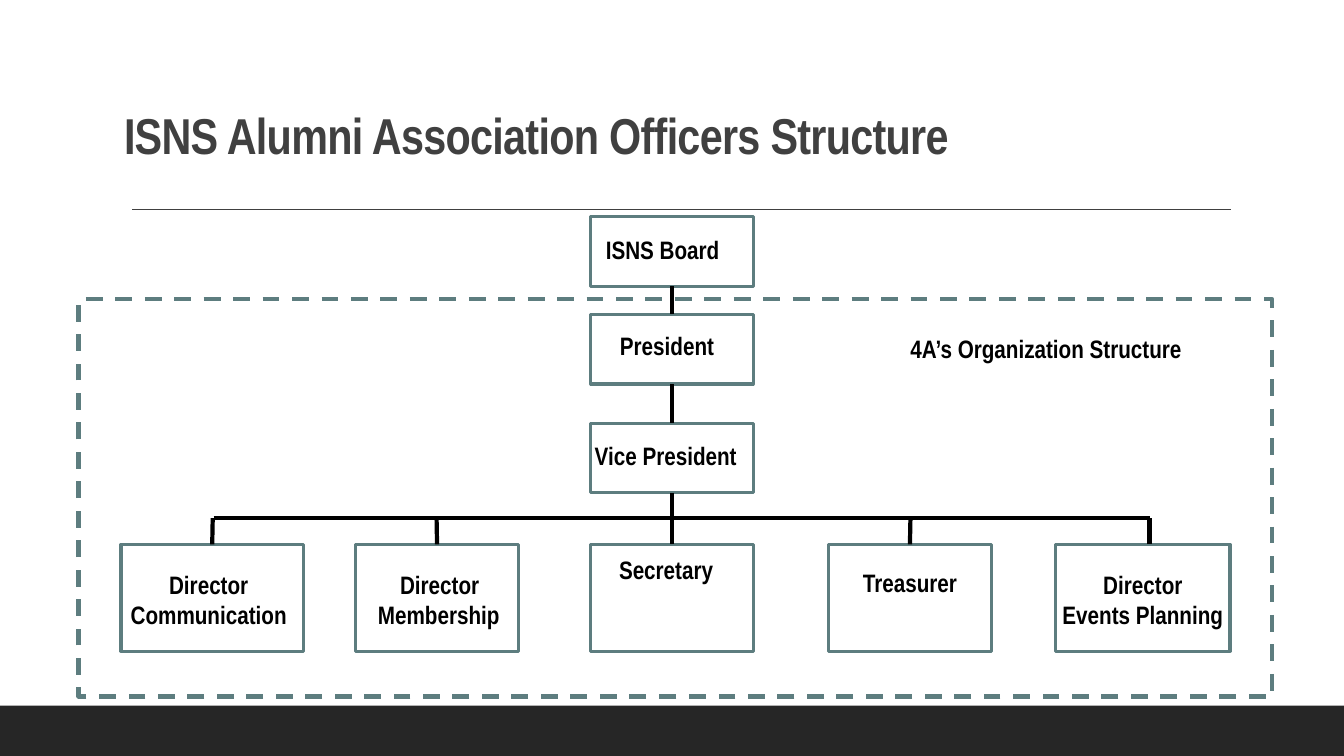
import pptx
import pptx.util
import pptx.dml.color
import pptx.enum.dml
import pptx.enum.shapes
import pptx.enum.text
import pptx.oxml.ns
import lxml.etree

Inches = pptx.util.Inches
Pt = pptx.util.Pt
Align = pptx.enum.text.PP_ALIGN
Anchor = pptx.enum.text.MSO_ANCHOR
Fit = pptx.enum.text.MSO_AUTO_SIZE
RECT = pptx.enum.shapes.MSO_SHAPE.RECTANGLE
STRAIGHT = pptx.enum.shapes.MSO_CONNECTOR.STRAIGHT


def paint(color, value):
    color.rgb = pptx.dml.color.RGBColor.from_string(value)


def link(ends, value="000000", width=3, top=None, low=None):
    line = slide.shapes.add_connector(STRAIGHT, *[Inches(n) for n in ends])
    paint(line.line.color, value)
    line.line.width = Pt(width)
    lxml.etree.SubElement(line._element.spPr, pptx.oxml.ns.qn("a:effectLst"))
    if top is not None:
        line.begin_connect(top, 2)
    if low is not None:
        line.end_connect(low, 0)


deck = pptx.Presentation()
deck.slide_width = Inches(13.33)
deck.slide_height = Inches(7.5)
slide = deck.slides.add_slide(deck.slide_layouts[5])

band = slide.shapes.add_shape(RECT, 0, Inches(7), Inches(13.33), Inches(0.5))
band.shadow.inherit = False
band.fill.solid()
paint(band.fill.fore_color, "262626")
band.line.fill.background()

link((1.31, 2.08, 12.21, 2.08), "404040", 1)

title = slide.shapes.title
title.left, title.top = Inches(1.13), Inches(0.1)
title.width, title.height = Inches(11), Inches(1.59)
frame = title.text_frame
frame.text = "ISNS Alumni Association Officers Structure"
frame.auto_size = Fit.NONE
frame.vertical_anchor = Anchor.BOTTOM
para = frame.paragraphs[0]
para.alignment = Align.LEFT
para.line_spacing = 0.9
para.font.name = "Arial Narrow"
para.font.size = Pt(36)
para.font.bold = True
paint(para.font.color, "404040")
para.runs[0]._r.get_or_add_rPr().set("spc", "-50")

boxes = {}
for name, left, top, width, height in [
    ("board", 5.86, 2.15, 1.61, 0.69),
    ("president", 5.86, 3.12, 1.61, 0.69),
    ("vice", 5.86, 4.2, 1.61, 0.69),
    ("talk", 1.2, 5.4, 1.81, 1.06),
    ("member", 3.53, 5.4, 1.61, 1.06),
    ("scribe", 5.86, 5.4, 1.61, 1.06),
    ("money", 8.22, 5.4, 1.61, 1.06),
    ("events", 10.47, 5.4, 1.73, 1.06),
    ("group", 0.78, 2.97, 11.84, 3.94),
]:
    box = slide.shapes.add_shape(RECT, Inches(left), Inches(top), Inches(width), Inches(height))
    box.shadow.inherit = False
    box.fill.background()
    paint(box.line.color, "5D7D7F")
    box.line.width = Pt(2.25)
    boxes[name] = box
boxes["group"].line.width = Pt(3)
boxes["group"].line.dash_style = pptx.enum.dml.MSO_LINE.DASH

for top, low in [("board", "president"), ("president", "vice"), ("vice", "scribe")]:
    link((6.66, 3, 6.66, 4), top=boxes[top], low=boxes[low])
link((2.12, 5.14, 11.41, 5.14))
for name, mid in [("talk", 2.11), ("member", 4.33), ("money", 9.03)]:
    link((mid, 5.14, mid, 5.4), low=boxes[name])
link((11.4, 5.14, 11.4, 5.4))

LEFT, MID = Align.LEFT, Align.CENTER
for left, top, width, height, wrap, lines in [
    (5.91, 2.28, 1.61, 0.4, True, [("ISNS Board", LEFT)]),
    (6.05, 3.23, 1.15, 0.4, False, [("President", LEFT)]),
    (5.8, 4.32, 1.63, 0.4, False, [("Vice President", LEFT)]),
    (1.13, 5.6, 1.88, 0.71, True, [("Director", MID), ("Communication", MID)]),
    (3.65, 5.6, 1.42, 0.71, False, [("Director", MID), ("Membership", LEFT)]),
    (6.03, 5.45, 1.21, 0.71, False, [("Secretary ", MID)]),
    (8.45, 5.58, 1.15, 0.4, False, [("Treasurer", MID)]),
    (10.43, 5.6, 1.81, 0.71, False, [("Director", MID), ("Events Planning", MID)]),
    (8.93, 3.26, 3.55, 0.4, True, [("4A’s Organization Structure", LEFT)]),
]:
    label = slide.shapes.add_textbox(Inches(left), Inches(top), Inches(width), Inches(height))
    frame = label.text_frame
    frame.word_wrap = wrap
    frame.auto_size = Fit.SHAPE_TO_FIT_TEXT
    frame.text = "\n".join(text for text, side in lines)
    for para, (text, side) in zip(frame.paragraphs, lines):
        para.alignment = side
        para.font.name = "Arial Narrow"
        para.font.size = Pt(18)
        para.font.bold = True
        paint(para.font.color, "000000")

deck.save("out.pptx")
